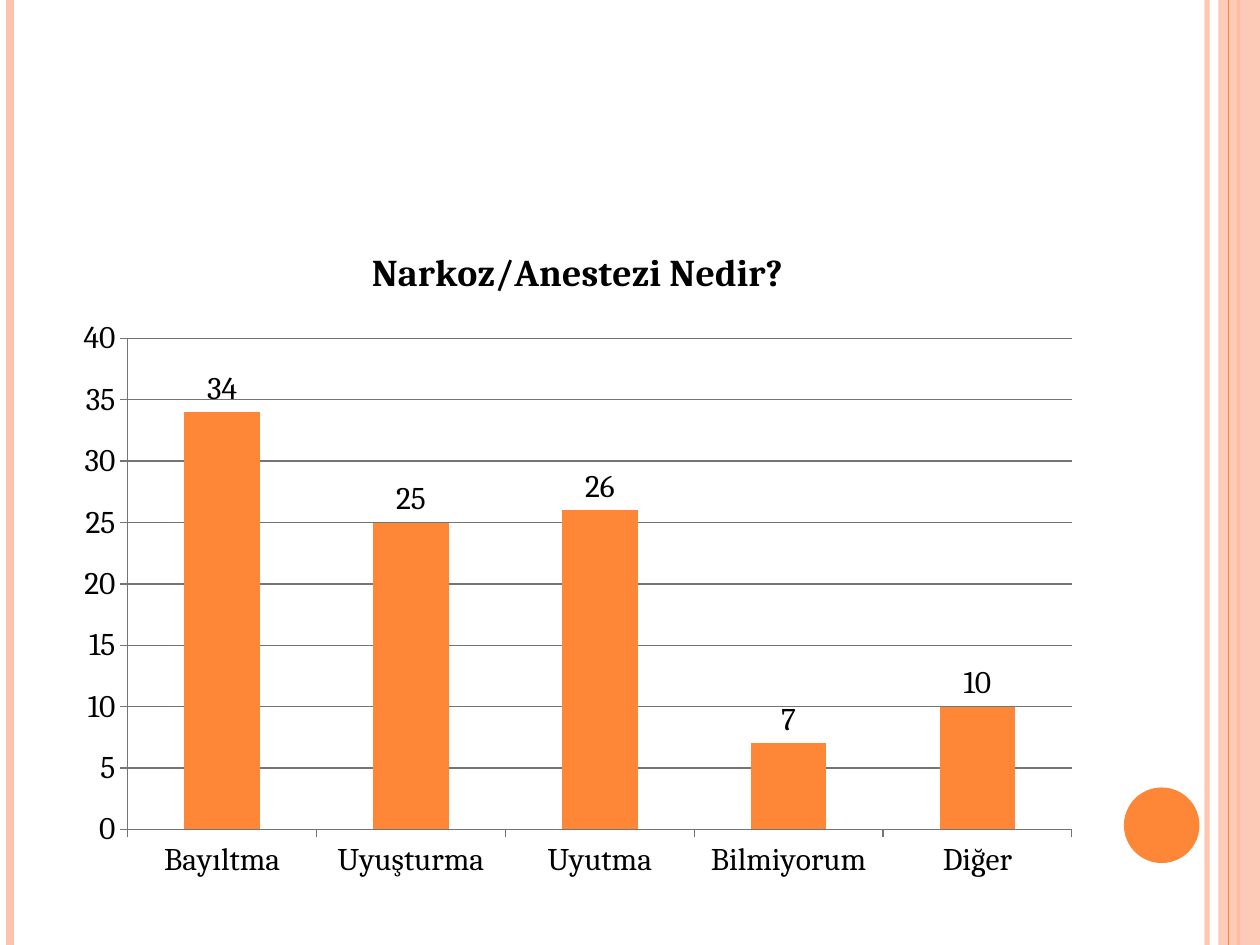
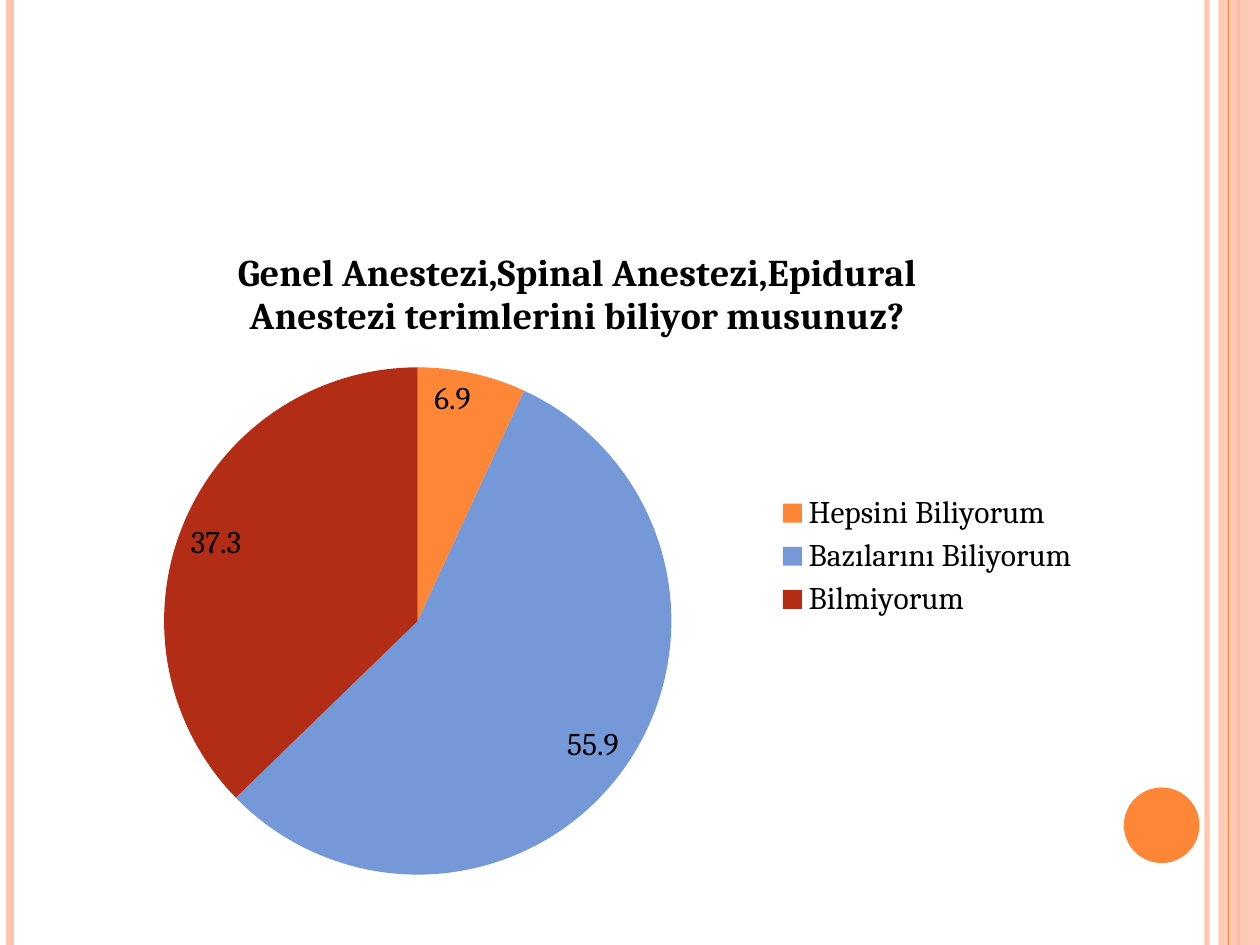
from lxml import etree
from pptx import Presentation
from pptx.chart.data import CategoryChartData
from pptx.dml.color import RGBColor
from pptx.enum import chart as ch, shapes
from pptx.oxml import ns
from pptx.util import Inches, Pt

FONT = "Cambria"
ORANGE, PEACH, BLUE, RED = "FE8637", "FEC3AE", "7598D9", "B32C16"
BLACK, GREY = "000000", "747474"
WIDE, HIGH = 10, 7.5

# Shared bands: x, colour, width in points, opacity in percent
BACK = [(9.58, PEACH, 3, 93), (0.08, PEACH, 4.5, 100), (9.83, ORANGE, 1.5, 100)]
FRONT = [(9.75, ORANGE, 0.75, 100)]
STRIP = (9.67, 0, 0.33, HIGH)
DOT = (8.92, 6.25, 0.6, 0.6)
FRAME = (0.5, 1.75, 8.17, 5.33)

CHARTS = [
    {"kind": ch.XL_CHART_TYPE.COLUMN_CLUSTERED,
     "title": "Narkoz/Anestezi Nedir?",
     "data": {"Bayıltma": 34, "Uyuşturma": 25, "Uyutma": 26,
              "Bilmiyorum": 7, "Diğer": 10}},
    {"kind": ch.XL_CHART_TYPE.PIE,
     "title": "Genel Anestezi,Spinal Anestezi,Epidural Anestezi "
              "terimlerini biliyor musunuz?",
     "data": {"Hepsini Biliyorum": 6.9, "Bazılarını Biliyorum": 55.9,
              "Bilmiyorum": 37.3}},
]


def rgb(code):
    """Turn a hex string into a colour."""
    return RGBColor.from_string(code)


def paint(fill, code, alpha=100):
    """Set a solid fill, with its opacity in percent."""
    fill.solid()
    fill.fore_color.rgb = rgb(code)
    if alpha < 100:
        tint = fill._xPr.find(".//" + ns.qn("a:srgbClr"))
        etree.SubElement(tint, ns.qn("a:alpha"), val=str(alpha * 1000))


def style(font, size, bold=False):
    """Set the chart typeface."""
    font.name, font.size, font.bold = FONT, Pt(size), bold
    font.color.rgb = rgb(BLACK)


def stripe(slide, x, code, width, alpha):
    """Draw a line over the full height of the slide."""
    line = slide.shapes.add_connector(
        shapes.MSO_CONNECTOR.STRAIGHT, Inches(x), 0, Inches(x), Inches(HIGH))
    line.line.width = Pt(width)
    paint(line.line.fill, code, alpha)
    etree.SubElement(line._element.spPr, ns.qn("a:effectLst"))


def block(slide, kind, box, code, alpha=100):
    """Draw a filled shape with no outline."""
    shape = slide.shapes.add_shape(kind, *map(Inches, box))
    shape.shadow.inherit = False
    shape.line.fill.background()
    paint(shape.fill, code, alpha)


def decorate(slide):
    """Draw the bands and the dot that the slides share."""
    for band in BACK:
        stripe(slide, *band)
    block(slide, shapes.MSO_SHAPE.RECTANGLE, STRIP, PEACH, 87)
    for band in FRONT:
        stripe(slide, *band)
    block(slide, shapes.MSO_SHAPE.OVAL, DOT, ORANGE)


def plot(slide, kind, title, data):
    """Add a chart of one series, with its title and labels."""
    table = CategoryChartData()
    table.categories = list(data)
    table.add_series(title, list(data.values()))
    chart = slide.shapes.add_chart(kind, *map(Inches, FRAME), table).chart
    style(chart.font, 18)
    chart.has_title = True
    run = chart.chart_title.text_frame.paragraphs[0].add_run()
    run.text = title
    style(run.font, 21.6, True)
    chart.chart_title.include_in_layout = False
    body = chart.plots[0]
    body.has_data_labels = True
    body.data_labels.show_value = True
    style(body.data_labels.font, 18)
    if kind == ch.XL_CHART_TYPE.PIE:
        finish_pie(chart, body)
    else:
        finish_bars(chart, body)


def finish_bars(chart, body):
    """Colour the columns and draw the axes and grid."""
    chart.has_legend = False
    body.vary_by_categories = False
    body.gap_width = 150
    body.data_labels.position = ch.XL_LABEL_POSITION.OUTSIDE_END
    paint(body.series[0].format.fill, ORANGE)
    value = chart.value_axis
    value.minimum_scale, value.maximum_scale, value.major_unit = 0, 40, 5
    value.has_major_gridlines = True
    for axis in (value, chart.category_axis):
        axis.major_tick_mark = ch.XL_TICK_MARK.OUTSIDE
        style(axis.tick_labels.font, 18)
    for part in (value, chart.category_axis, value.major_gridlines):
        part.format.line.width = Pt(0.75)
        paint(part.format.line.fill, GREY)


def finish_pie(chart, body):
    """Colour the slices and place the legend."""
    body.vary_by_categories = True
    body.data_labels.position = ch.XL_LABEL_POSITION.INSIDE_END
    for spot, code in enumerate((ORANGE, BLUE, RED)):
        paint(body.series[0].points[spot].format.fill, code)
    chart.has_legend = True
    chart.legend.position = ch.XL_LEGEND_POSITION.RIGHT
    chart.legend.include_in_layout = False
    style(chart.legend.font, 18)


deck = Presentation()
deck.slide_width, deck.slide_height = Inches(WIDE), Inches(HIGH)
for item in CHARTS:
    page = deck.slides.add_slide(deck.slide_layouts[6])
    decorate(page)
    plot(page, **item)
deck.save("out.pptx")
